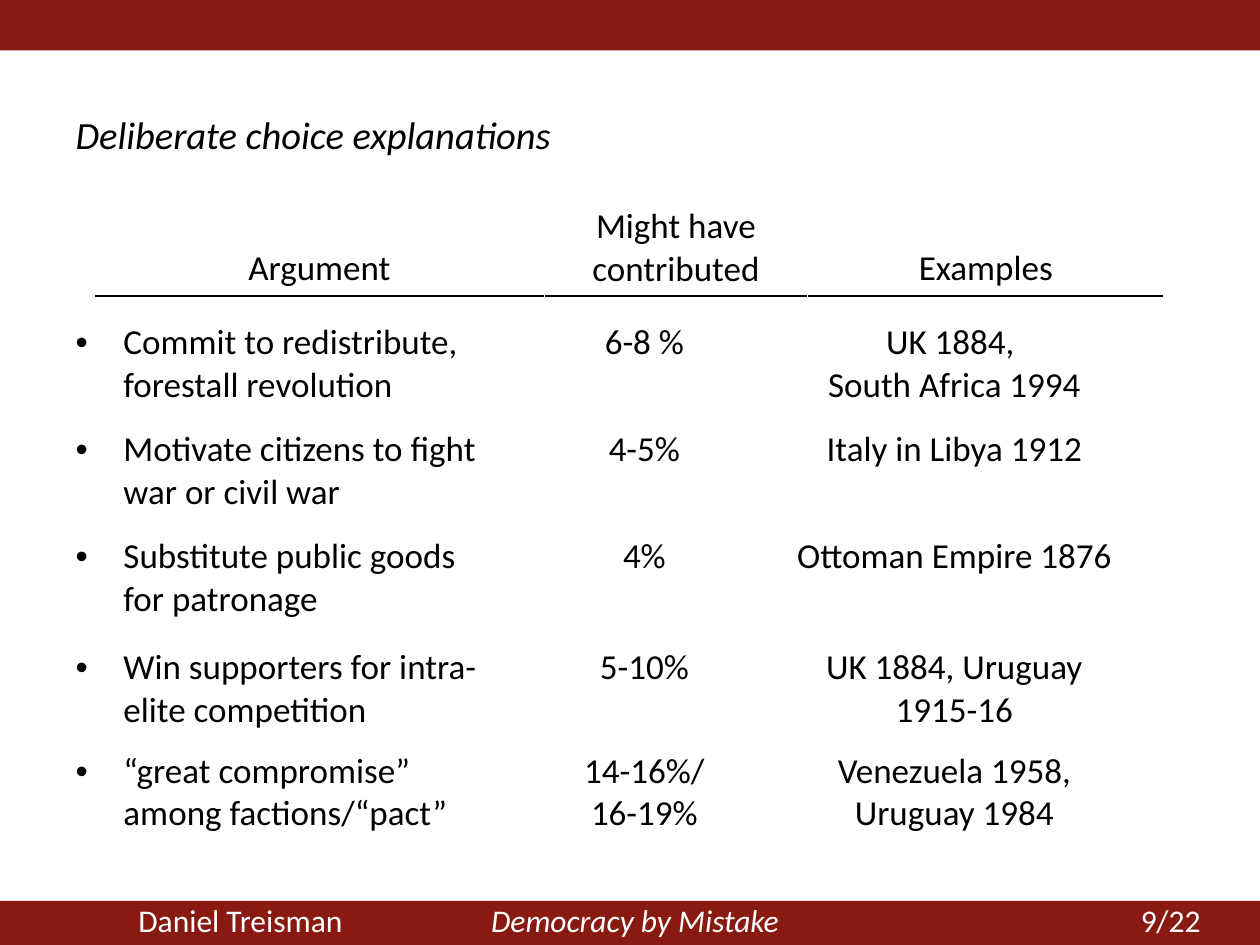
from dataclasses import dataclass

from lxml.etree import SubElement
from pptx import Presentation
from pptx.dml.color import RGBColor
from pptx.enum.shapes import MSO_SHAPE
from pptx.enum.text import MSO_ANCHOR, MSO_AUTO_SIZE, PP_ALIGN
from pptx.oxml import parse_xml
from pptx.oxml.ns import nsdecls, qn
from pptx.util import Inches, Pt

FONT = "Calibri"
RED = RGBColor(0x89, 0x1A, 0x11)
WHITE = RGBColor(0xFF, 0xFF, 0xFF)
BLACK = RGBColor(0, 0, 0)
COLS = (3.57, 2.09, 2.83)
ROW = 0.77
INDENT = 0.38


@dataclass
class Case:
    top: float
    claim: str
    share: tuple[str, ...]
    sites: tuple[str, ...]


HEADS = (("Argument",), ("Might have contributed",), ("Examples",))
CASES = (
    Case(2.5, "Commit to redistribute, forestall revolution",
         ("6-8 %",), ("UK 1884, ", "South Africa 1994")),
    Case(3.35, "Motivate citizens to fight war or civil war",
         ("4-5%",), ("Italy in Libya 1912",)),
    Case(4.2, "Substitute public goods for patronage",
         ("4%",), ("Ottoman Empire 1876",)),
    Case(5.08, "Win supporters for intra-elite competition",
         ("5-10%",), ("UK 1884, Uruguay 1915-16",)),
    Case(5.9, "“great compromise” among factions/“pact”",
         ("14-16%/", "16-19%"), ("Venezuela 1958, Uruguay 1984",)),
)


def add_run(para, text: str, size: float, color: RGBColor, italic: bool = False) -> None:
    run = para.add_run()
    run.text = text
    font = run.font
    font.name, font.size, font.italic = FONT, Pt(size), italic
    font.color.rgb = color


def add_bar(slide, top: float, height: float):
    bar = slide.shapes.add_shape(
        MSO_SHAPE.RECTANGLE, 0, Inches(top), Inches(10), Inches(height))
    bar.shadow.inherit = False
    bar.fill.solid()
    bar.fill.fore_color.rgb = RED
    bar.line.fill.background()
    return bar


def set_tabs(para, stops: tuple[float, ...]) -> None:
    tabs = SubElement(para._p.get_or_add_pPr(), qn("a:tabLst"))
    for stop in stops:
        SubElement(tabs, qn("a:tab"), pos=str(Inches(stop)), algn="l")


def set_bullet(para) -> None:
    props = para._p.get_or_add_pPr()
    props.set("marL", str(Inches(INDENT)))
    props.set("indent", str(-Inches(INDENT)))
    SubElement(props, qn("a:buFont"), typeface="Arial")
    SubElement(props, qn("a:buChar"), char="•")


def rule_below(cell) -> None:
    line = parse_xml(
        f'<a:lnB {nsdecls("a")} w="{Pt(1)}"><a:solidFill>'
        f'<a:srgbClr val="{BLACK}"/></a:solidFill></a:lnB>')
    cell._tc.get_or_add_tcPr().insert(0, line)


def add_row(slide, left: float, top: float, texts: tuple[tuple[str, ...], ...]):
    """Add a one-row table; each cell holds a tuple of paragraphs."""
    table = slide.shapes.add_table(
        1, len(COLS), Inches(left), Inches(top), Inches(sum(COLS)), Inches(ROW)).table
    table.first_row = table.horz_banding = False
    for col, width, cell, lines in zip(table.columns, COLS, table.rows[0].cells, texts):
        col.width = Inches(width)
        cell.fill.background()
        frame = cell.text_frame
        for i, line in enumerate(lines):
            para = frame.add_paragraph() if i else frame.paragraphs[0]
            para.alignment = PP_ALIGN.CENTER
            add_run(para, line, 20, BLACK)
    return table


def add_title(slide) -> None:
    title = slide.shapes.title
    title.left, title.top = Inches(0.5), Inches(0.83)
    title.width, title.height = Inches(8.78), Inches(0.6)
    frame = title.text_frame
    frame.auto_size = MSO_AUTO_SIZE.NONE
    frame.vertical_anchor = MSO_ANCHOR.TOP
    para = frame.paragraphs[0]
    para.alignment = PP_ALIGN.LEFT
    add_run(para, "Deliberate choice explanations", 22, BLACK, italic=True)


def add_footer(slide) -> None:
    frame = add_bar(slide, 7.15, 0.35).text_frame
    frame.margin_top = 0
    frame.vertical_anchor = MSO_ANCHOR.TOP
    para = frame.paragraphs[0]
    para.alignment = PP_ALIGN.LEFT
    set_tabs(para, (1, 3.8, 9.08))
    add_run(para, "\tDaniel Treisman", 18, WHITE)
    add_run(para, "\tDemocracy by Mistake", 18, WHITE, italic=True)
    add_run(para, "\t/22", 18, WHITE)

    box = slide.shapes.add_textbox(Inches(7), Inches(7.1), Inches(2.28), Inches(0.4))
    box.text_frame.word_wrap = True
    box.text_frame.vertical_anchor = MSO_ANCHOR.MIDDLE
    para = box.text_frame.paragraphs[0]
    para.alignment = PP_ALIGN.RIGHT
    add_run(para, "9", 18, WHITE)


def main() -> None:
    deck = Presentation()
    deck.slide_width, deck.slide_height = Inches(10), Inches(7.5)
    slide = deck.slides.add_slide(deck.slide_layouts[5])
    add_footer(slide)
    add_bar(slide, 0, 0.4)
    add_title(slide)
    for cell in add_row(slide, 0.75, 1.58, HEADS).rows[0].cells:
        cell.vertical_anchor = MSO_ANCHOR.BOTTOM
        rule_below(cell)
    for case in CASES:
        table = add_row(slide, 0.5, case.top, ((case.claim,), case.share, case.sites))
        claim = table.cell(0, 0).text_frame.paragraphs[0]
        claim.alignment = PP_ALIGN.LEFT
        set_bullet(claim)
    deck.save("out.pptx")


if __name__ == "__main__":
    main()
